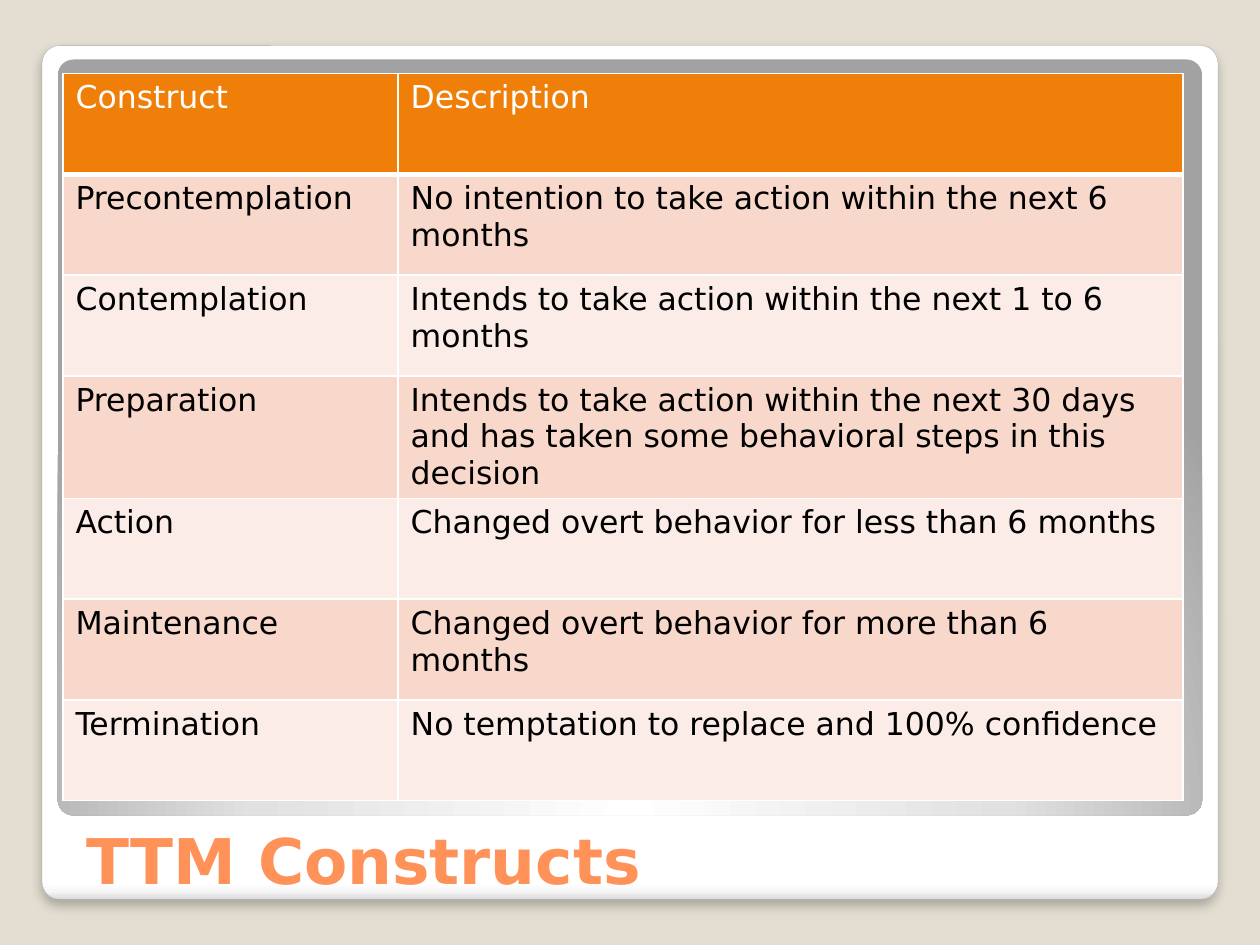
from lxml.etree import SubElement
from pptx import Presentation
from pptx.dml.color import RGBColor
from pptx.enum.shapes import MSO_SHAPE
from pptx.enum.text import MSO_ANCHOR, PP_ALIGN
from pptx.oxml.ns import qn
from pptx.util import Pt

ROWS = [
    ("Construct", "Description"),
    ("Precontemplation", "No intention to take action within the next 6 months"),
    ("Contemplation", "Intends to take action within the next 1 to 6 months"),
    ("Preparation", "Intends to take action within the next 30 days and has "
                    "taken some behavioral steps in this decision"),
    ("Action", "Changed overt behavior for less than 6 months"),
    ("Maintenance", "Changed overt behavior for more than 6 months"),
    ("Termination", "No temptation to replace and 100% confidence"),
]


def rgb(color):
    return RGBColor.from_string(color)


def add(parent, tag, **attrs):
    return SubElement(parent, qn(tag), {k: str(v) for k, v in attrs.items()})


class Deck:
    font = "DejaVu Sans"
    header, bands = "F07F09", ("FCECE7", "F9D8CC")

    def __init__(self, prs):
        self.s = prs.slides.add_slide(prs.slide_layouts[5])

    def background(self, color):
        fill = self.s.background.fill
        fill.solid()
        fill.fore_color.rgb = rgb(color)

    def panel(self, x, y, w, h, stops, angle=None, rect=None):
        """Rounded panel with a linear (angle) or circular (rect) gradient."""
        sp = self.s.shapes.add_shape(MSO_SHAPE.ROUNDED_RECTANGLE,
                                     Pt(x), Pt(y), Pt(w), Pt(h))
        sp.adjustments[0] = 0.021
        sp.shadow.inherit = False
        sp.line.fill.background()
        sp.fill.background()
        spPr = sp.element.spPr
        grad = spPr.makeelement(qn("a:gradFill"), {"rotWithShape": "1"})
        spPr.replace(spPr.find(qn("a:noFill")), grad)
        gs_list = add(grad, "a:gsLst")
        for pos, color in stops:
            add(add(gs_list, "a:gs", pos=pos * 1000), "a:srgbClr", val=color)
        if rect:
            circle = add(grad, "a:path", path="circle")
            add(circle, "a:fillToRect",
                **{side: v * 1000 for side, v in zip("ltrb", rect)})
        else:
            add(grad, "a:lin", ang=angle * 60000, scaled=0)
        return sp

    def shadow(self, sp, blur, dist, alpha):
        effects = sp.element.spPr.find(qn("a:effectLst"))
        shadow = add(effects, "a:outerShdw", blurRad=Pt(blur), dist=Pt(dist),
                     dir=90 * 60000, algn="t", rotWithShape=0)
        black = add(shadow, "a:srgbClr", val="000000")
        add(black, "a:alpha", val=alpha * 1000)

    def title(self, text, x, y, w, h):
        sp = self.s.shapes.title
        sp.left, sp.top, sp.width, sp.height = Pt(x), Pt(y), Pt(w), Pt(h)
        sp.element.getparent().append(sp.element)  # in front of the panels
        tf = sp.text_frame
        tf.text = text
        tf.vertical_anchor = MSO_ANCHOR.BOTTOM
        p = tf.paragraphs[0]
        p.alignment = PP_ALIGN.LEFT
        self.style(p, 36, "FF9258", True)

    def style(self, p, size, color, bold=False):
        p.font.name, p.font.size, p.font.bold = self.font, Pt(size), bold
        p.font.color.rgb = rgb(color)

    def borders(self, cell, bottom):
        tcPr = cell._tc.get_or_add_tcPr()
        for side, width in zip("LRTB", (1, 1, 1, bottom)):
            ln = add(tcPr, f"a:ln{side}", w=Pt(width))
            add(add(ln, "a:solidFill"), "a:srgbClr", val="FFFFFF")

    def table(self, rows, x, y, widths, row_height):
        tbl = self.s.shapes.add_table(
            len(rows), len(widths), Pt(x), Pt(y),
            Pt(sum(widths)), Pt(row_height * len(rows))).table
        for col, width in zip(tbl.columns, widths):
            col.width = Pt(width)
        for i, row in enumerate(rows):
            for j, text in enumerate(row):
                cell = tbl.cell(i, j)
                self.borders(cell, 1 if i else 3)
                cell.fill.solid()
                cell.fill.fore_color.rgb = rgb(self.bands[i % 2] if i else self.header)
                cell.text = text
                self.style(cell.text_frame.paragraphs[0], 18,
                           "000000" if i else "FFFFFF")


def main():
    prs = Presentation()
    prs.slide_width, prs.slide_height = Pt(720), Pt(540)
    deck = Deck(prs)
    deck.background("E3DED1")

    # White card with a soft shadow
    card = deck.panel(24, 26, 672, 488, [(0, "FFFFFF"), (98, "FFFFFF"),
                                         (99, "F7F7F7"), (100, "DADADA")], angle=90)
    card.line.color.rgb = rgb("A4A4A4")
    card.line.width = Pt(0.16)
    deck.shadow(card, blur=6, dist=4, alpha=25)

    # Grey panel lit from below
    deck.panel(33, 34, 654, 432, [(0, "FFFFFF"), (55, "E1E1E1"), (100, "A2A2A2")],
               rect=(50, 175, 50, -75))

    # Title and table
    deck.title("TTM Constructs", 42, 468, 633, 48)
    deck.table(ROWS, 36, 42, (191.5, 448.5), 57.6)
    prs.save("out.pptx")


if __name__ == "__main__":
    main()
